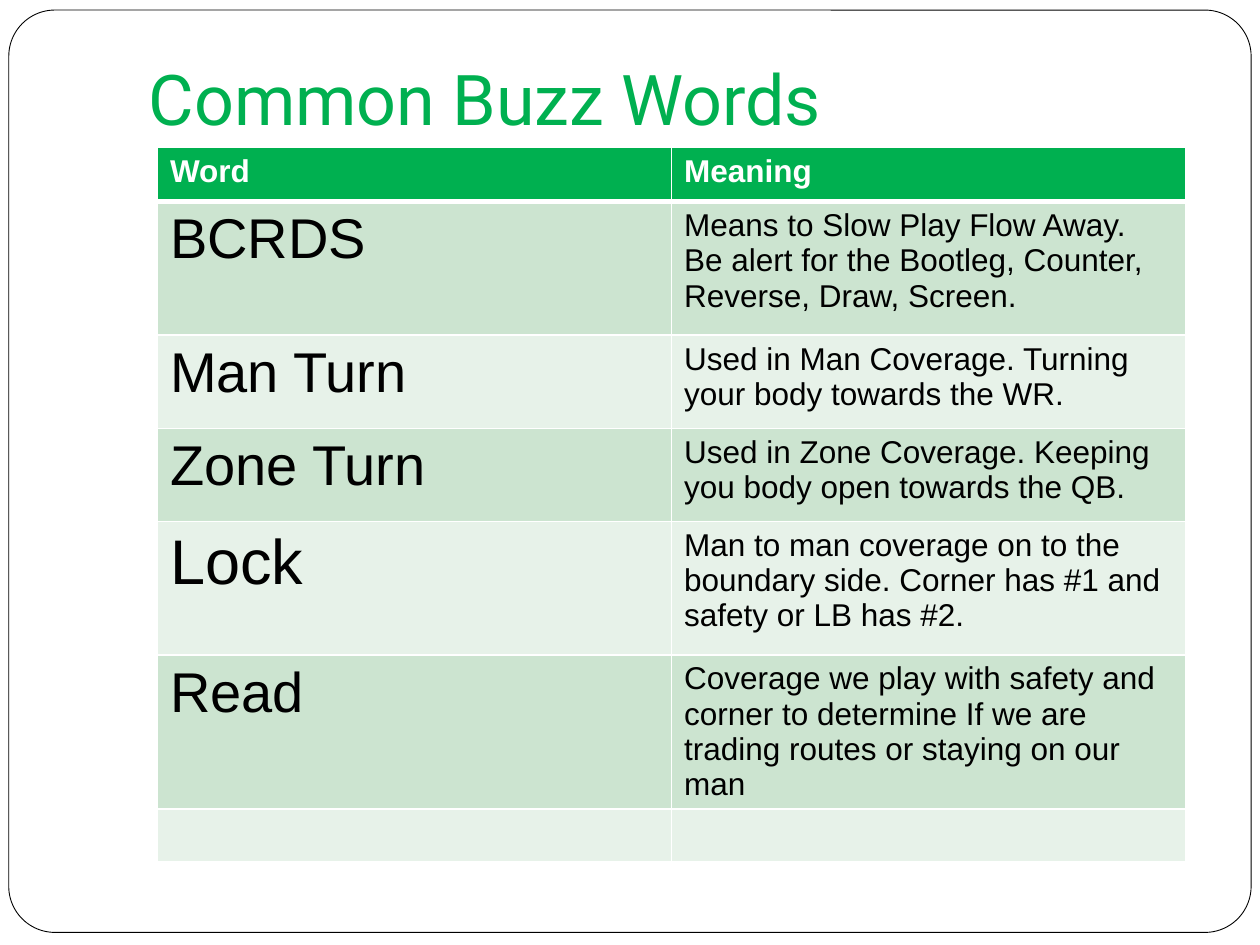
from dataclasses import dataclass

from lxml.etree import SubElement
from pptx import Presentation
from pptx.dml.color import RGBColor
from pptx.enum.shapes import MSO_SHAPE
from pptx.enum.text import MSO_ANCHOR, MSO_AUTO_SIZE, PP_ALIGN
from pptx.oxml.ns import qn
from pptx.util import Inches, Pt


@dataclass(frozen=True)
class Theme:
    green: str = "00B050"
    white: str = "FFFFFF"
    black: str = "000000"
    dark_band: str = "CCE4D0"
    light_band: str = "E7F2E9"
    title_font: str = "Roboto"
    body_font: str = "Arial"
    title_size: int = 40
    word_size: int = 32
    large_word_size: int = 36
    meaning_size: int = 18


theme = Theme()


def style_text(frame, font, size, color, bold=False):
    for para in frame.paragraphs:
        para.alignment = PP_ALIGN.LEFT
        para.font.size = Pt(size)
        for span in para.runs:
            span.font.name = font
            span.font.size = Pt(size)
            span.font.bold = bold
            span.font.color.rgb = RGBColor.from_string(color)


def set_borders(cell, bottom_width):
    properties = cell._tc.get_or_add_tcPr()
    widths = {"lnL": 1, "lnR": 1, "lnT": 1, "lnB": bottom_width}
    for position, (side, width) in enumerate(widths.items()):
        line = SubElement(properties, qn(f"a:{side}"), w=str(Pt(width)))
        fill = SubElement(line, qn("a:solidFill"))
        SubElement(fill, qn("a:srgbClr"), val=theme.white)
        properties.insert(position, line)


deck = Presentation()
deck.slide_width, deck.slide_height = Inches(10), Inches(7.5)
page = deck.slides.add_slide(deck.slide_layouts[5])

title = page.shapes.title
title.left, title.top = Inches(1.08), Inches(0.33)
title.width, title.height = Inches(8.5), Inches(0.88)
title_frame = title.text_frame
title_frame.text = "Common Buzz Words"
title_frame.word_wrap = True
title_frame.auto_size = MSO_AUTO_SIZE.NONE
title_frame.vertical_anchor = MSO_ANCHOR.BOTTOM
title_frame.margin_left = title_frame.margin_right = Inches(0.1)
title_frame.margin_top, title_frame.margin_bottom = Inches(0.05), Inches(0.1)
style_text(title_frame, theme.title_font, theme.title_size, theme.green)

border = page.shapes.add_shape(
    MSO_SHAPE.ROUNDED_RECTANGLE, Inches(0.07), Inches(0.08), Inches(9.86), Inches(7.32)
)
border.adjustments[0] = 0.05
border.shadow.inherit = False
border.fill.solid()
border.fill.fore_color.rgb = RGBColor.from_string(theme.white)
border.line.color.rgb = RGBColor.from_string(theme.black)
border.line.width = Pt(0.5)
title.element.addprevious(border.element)

entries = [
    ("Word", "Meaning", 0.43),
    ("BCRDS", "Means to Slow Play Flow Away. Be alert for the Bootleg, Counter, Reverse, Draw, Screen.", 1.06),
    ("Man Turn", "Used in Man Coverage. Turning your body towards the WR.", 0.74),
    ("Zone Turn", "Used in Zone Coverage. Keeping you body open towards the QB.", 0.74),
    ("Lock", "Man to man coverage on to the boundary side. Corner has #1 and safety or LB has #2.", 1.06),
    ("Read", "Coverage we play with safety and corner to determine If we are trading routes or staying on our man", 1.06),
    ("", "", 0.42),
]
table = page.shapes.add_table(
    len(entries), 2, Inches(1.25), Inches(1.17), Inches(8.17), Inches(5.5)
).table
for column in table.columns:
    column.width = Inches(4.08)

for row_index, (word, meaning, height) in enumerate(entries):
    table.rows[row_index].height = Inches(height)
    header = row_index == 0
    band = theme.dark_band if row_index % 2 else theme.light_band
    word_size = theme.large_word_size if word == "Lock" else theme.word_size
    if header or not word:
        word_size = theme.meaning_size
    for column_index, (text, size) in enumerate(
        [(word, word_size), (meaning, theme.meaning_size)]
    ):
        cell = table.cell(row_index, column_index)
        cell.text_frame.text = text
        cell.fill.solid()
        cell.fill.fore_color.rgb = RGBColor.from_string(theme.green if header else band)
        color = theme.white if header else theme.black
        style_text(cell.text_frame, theme.body_font, size, color, header)
        set_borders(cell, 3 if header else 1)

deck.save("out.pptx")
